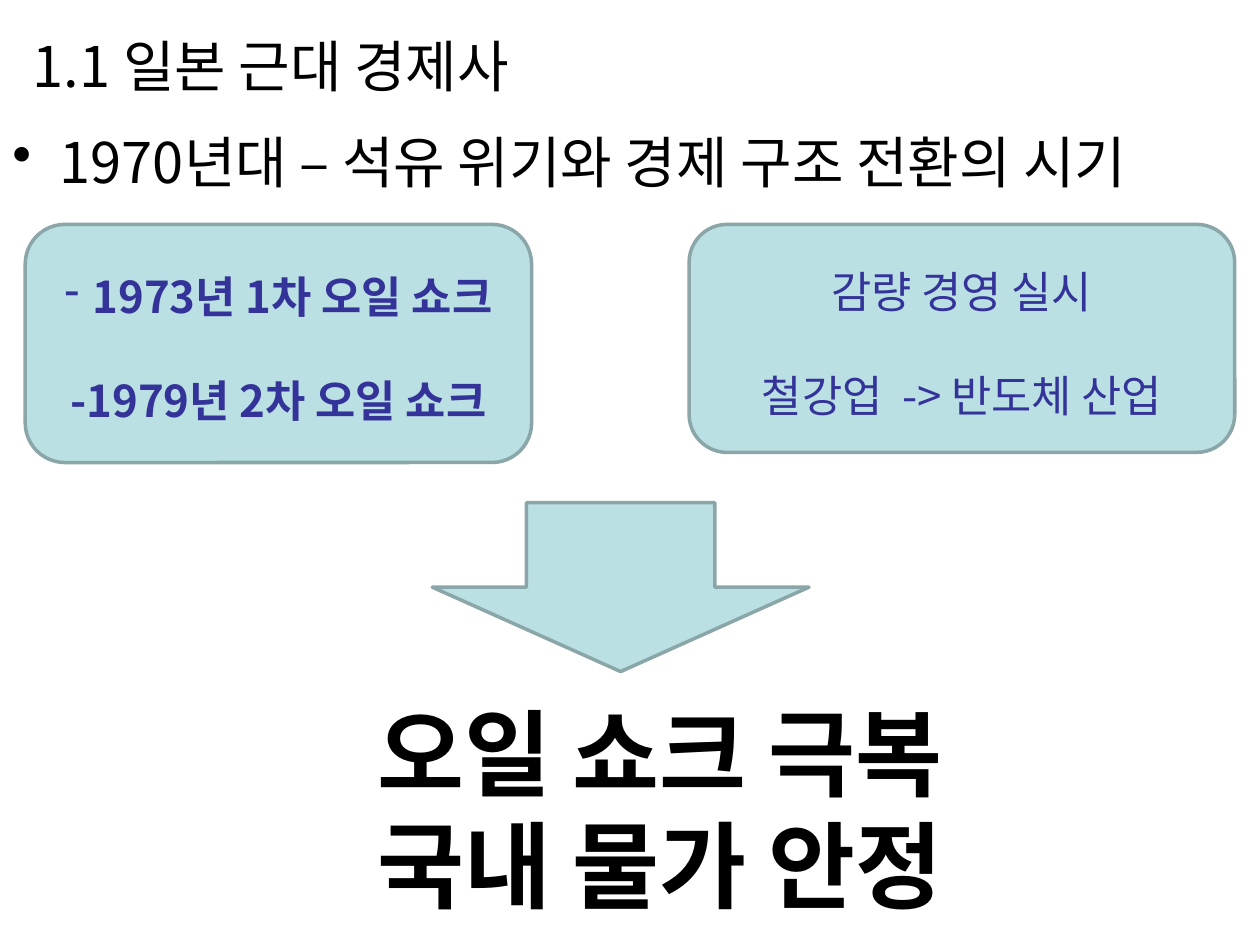
from dataclasses import dataclass
from lxml.etree import SubElement as Sub
from pptx import Presentation
from pptx.dml.color import RGBColor as RGB
from pptx.enum.shapes import MSO_SHAPE as Shape
from pptx.enum.text import MSO_ANCHOR as Anchor, PP_ALIGN as Align
from pptx.oxml.ns import qn
from pptx.util import Pt


@dataclass(frozen=True)
class Theme:
    font: str = "Noto Sans CJK KR"
    ink: str = "000000"
    navy: str = "333399"
    fill: str = "BBE0E3"
    edge: str = "8AA6A8"
    head: int = 32
    note: int = 25
    big: int = 54
    lead: float = 1.18  # line height per point of type
    drop: float = 0.11  # shift that centres the glyphs in a tight line


T = Theme()

# Content: areas are left, top, width, height in points
TITLE = ["1.1 일본 근대 경제사"]
TOPIC = ["1970년대 – 석유 위기와 경제 구조 전환의 시기"]
CRISIS = ["1973년 1차 오일 쇼크", "-1979년 2차 오일 쇼크"]
REFORM = ["감량 경영 실시", "철강업  -> 반도체 산업"]
RESULT = ["오일 쇼크 극복", "국내 물가 안정"]

TITLE_AT = (0, 3.6, 720, 60.5)
TOPIC_AT = (0, 66.2, 720, 473.8)
RESULT_AT = (121.7, 388.8, 510.5, 138.2)
ARROW_AT = (247, 287.3, 215.3, 96.5)
CARDS = [
    (CRISIS, (14.4, 128.2, 289.4, 136.1), dict(bold=True, mark="-", hang=16)),
    (REFORM, (393.8, 128.2, 311.8, 130.3), {}),
]


def add_mark(para, mark, hang):
    """Give a paragraph a bullet with a hanging indent."""
    props = para._p.get_or_add_pPr()
    props.set("marL", str(Pt(hang)))
    props.set("indent", str(-Pt(hang)))
    Sub(props, qn("a:buChar")).set("char", mark)


def put_text(shape, lines, size, color=T.ink, bold=False, align=Align.LEFT,
             anchor=Anchor.TOP, left=7.2, gap=0, mark=None, hang=0):
    """Fill a shape with paragraphs; a mark goes on the first one only."""
    frame = shape.text_frame
    frame.word_wrap = True
    frame.vertical_anchor = anchor
    frame.margin_left = Pt(left)
    shift = T.drop * size * (2 if anchor == Anchor.MIDDLE else 1)
    frame.margin_top = Pt(round(3.6 + shift, 1))
    for i, line in enumerate(lines):
        para = frame.add_paragraph() if i else frame.paragraphs[0]
        para.alignment = align
        para.line_spacing = Pt(round(size * T.lead, 1))
        if i and gap:
            para.space_before = Pt(gap)
        if mark and i == 0:
            add_mark(para, mark, hang)
        run = para.add_run()
        run.text = line
        font = run.font
        font.name, font.size, font.bold = T.font, Pt(size), bold
        font.color.rgb = RGB.from_string(color)
        Sub(run._r.get_or_add_rPr(), qn("a:ea")).set("typeface", T.font)


def add_box(slide, area, lines, size, **form):
    put_text(slide.shapes.add_textbox(*map(Pt, area)), lines, size, **form)


def add_form(slide, kind, area):
    shape = slide.shapes.add_shape(kind, *map(Pt, area))
    shape.shadow.inherit = False
    shape.fill.solid()
    shape.fill.fore_color.rgb = RGB.from_string(T.fill)
    shape.line.color.rgb = RGB.from_string(T.edge)
    shape.line.width = Pt(2)
    return shape


def main():
    deck = Presentation()
    deck.slide_width, deck.slide_height = Pt(720), Pt(540)
    slide = deck.slides.add_slide(deck.slide_layouts[6])

    add_box(slide, TITLE_AT, TITLE, T.head, anchor=Anchor.MIDDLE, left=18.7)
    add_box(slide, TOPIC_AT, TOPIC, T.head, mark="•", hang=27)
    for lines, area, form in CARDS:
        card = add_form(slide, Shape.ROUNDED_RECTANGLE, area)
        put_text(card, lines, T.note, color=T.navy, align=Align.CENTER,
                 anchor=Anchor.MIDDLE, gap=30, **form)
    add_form(slide, Shape.DOWN_ARROW, ARROW_AT)
    add_box(slide, RESULT_AT, RESULT, T.big, bold=True, align=Align.CENTER)

    deck.save("out.pptx")


if __name__ == "__main__":
    main()
